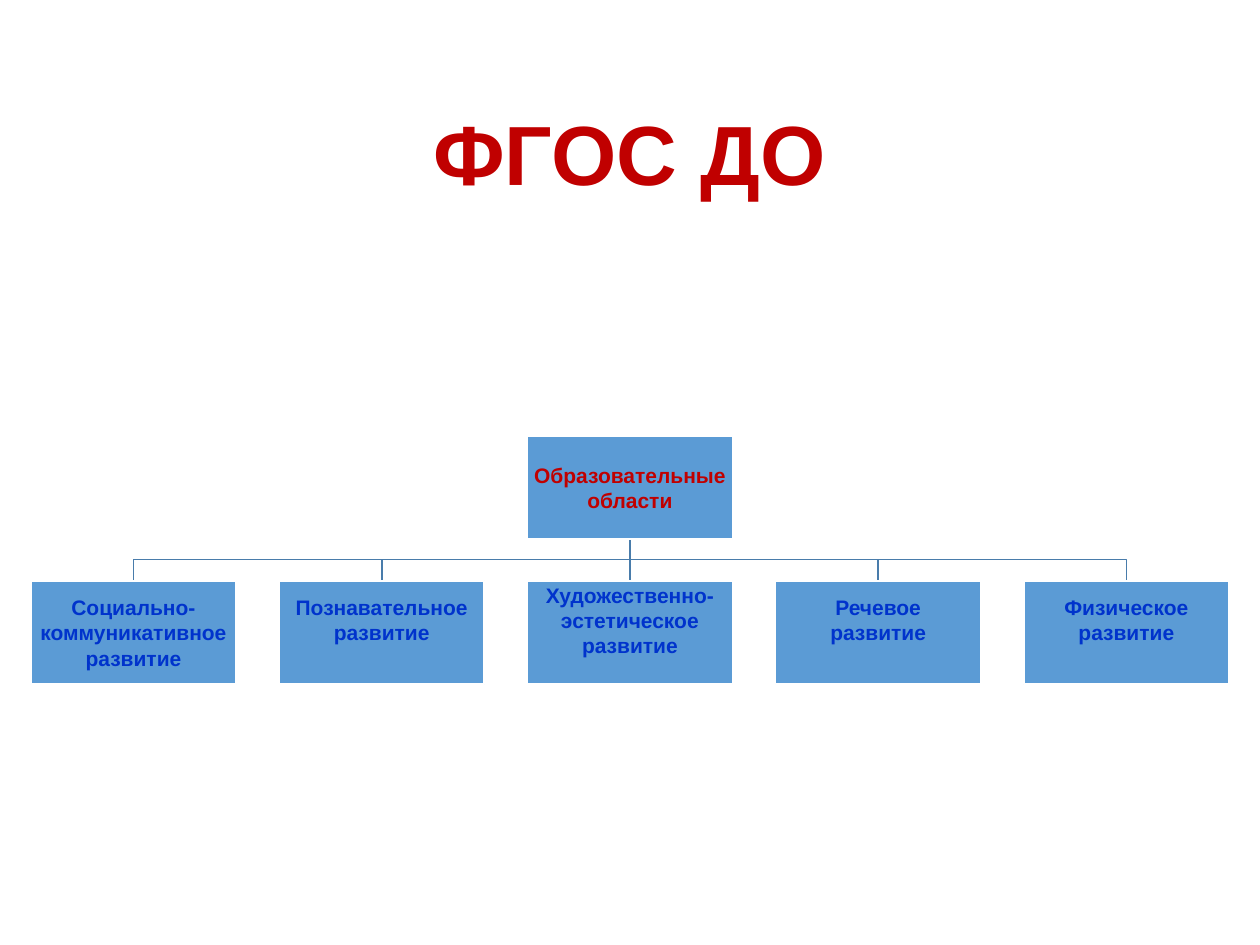
import pptx
from pptx.dml.color import RGBColor
from pptx.enum.shapes import MSO_CONNECTOR, MSO_SHAPE
from pptx.enum.text import MSO_ANCHOR, PP_ALIGN
from pptx.oxml.ns import qn
from pptx.util import Inches, Pt
from lxml import etree

TITLE = "ФГОС ДО"
ROOT = "Образовательные\nобласти"
AREAS = [
    ("Социально-\nкоммуникативное\nразвитие", 0.01),
    ("Познавательное\nразвитие", 0.21),
    ("Художественно-\nэстетическое\nразвитие", 0.21),
    ("Речевое\nразвитие", 0.21),
    ("Физическое\nразвитие", 0.21),
]
RED, BLUE, BOX_FILL, LINE, WHITE = "C00000", "0033CC", "5B9BD5", "497CAB", "FFFFFF"
CENTER, PITCH = 5, 1.97
BOX_WIDTH, BOX_HEIGHT = 1.63, 0.82
ROOT_TOP, AREA_TOP = 3.46, 4.61
TRUNK_TOP, BUS = 4.27, 4.44


def color(value):
    return RGBColor.from_string(value)


def write(text_frame, text, size, text_color):
    text_frame.text = text
    for paragraph in text_frame.paragraphs:
        paragraph.alignment = PP_ALIGN.CENTER
        for run in paragraph.runs:
            run.font.name = "Arial"
            run.font.size = Pt(size)
            run.font.bold = True
            run.font.color.rgb = color(text_color)


def style_line(shape, line_color):
    shape.line.color.rgb = color(line_color)
    shape.line.width = Pt(1)


def add_branch(slide, x):
    if x == CENTER:
        branch = slide.shapes.add_connector(
            MSO_CONNECTOR.STRAIGHT,
            Inches(x), Inches(TRUNK_TOP), Inches(x), Inches(AREA_TOP))
        etree.SubElement(branch._element.spPr, qn("a:effectLst"))
    else:
        builder = slide.shapes.build_freeform(Inches(CENTER), Inches(TRUNK_TOP))
        points = [(CENTER, BUS), (x, BUS), (x, AREA_TOP)]
        builder.add_line_segments(
            [(Inches(left), Inches(top)) for left, top in points], close=False)
        branch = builder.convert_to_shape()
        branch.fill.background()
        branch.shadow.inherit = False
    style_line(branch, LINE)


def add_box(slide, x, top, text, text_color, bottom_inset=0.01):
    box = slide.shapes.add_shape(
        MSO_SHAPE.RECTANGLE, Inches(x - BOX_WIDTH / 2), Inches(top),
        Inches(BOX_WIDTH), Inches(BOX_HEIGHT))
    box.shadow.inherit = False
    box.fill.solid()
    box.fill.fore_color.rgb = color(BOX_FILL)
    style_line(box, WHITE)
    frame = box.text_frame
    frame.word_wrap = True
    frame.vertical_anchor = MSO_ANCHOR.MIDDLE
    frame.margin_left = frame.margin_right = frame.margin_top = Inches(0.01)
    frame.margin_bottom = Inches(bottom_inset)
    write(frame, text, 12, text_color)


def main():
    presentation = pptx.Presentation()
    presentation.slide_width = Inches(10)
    presentation.slide_height = Inches(7.5)
    slide = presentation.slides.add_slide(presentation.slide_layouts[6])

    centers = [CENTER + (index - len(AREAS) // 2) * PITCH for index in range(len(AREAS))]
    for x in reversed(centers):
        add_branch(slide, x)
    add_box(slide, CENTER, ROOT_TOP, ROOT, RED)
    for x, (text, bottom_inset) in zip(centers, AREAS):
        add_box(slide, x, AREA_TOP, text, BLUE, bottom_inset)

    title = slide.shapes.add_textbox(Inches(3.32), Inches(0.76), Inches(3.35), Inches(0.91))
    title.text_frame.word_wrap = False
    write(title.text_frame, TITLE, 48, RED)
    presentation.save("out.pptx")


if __name__ == "__main__":
    main()
